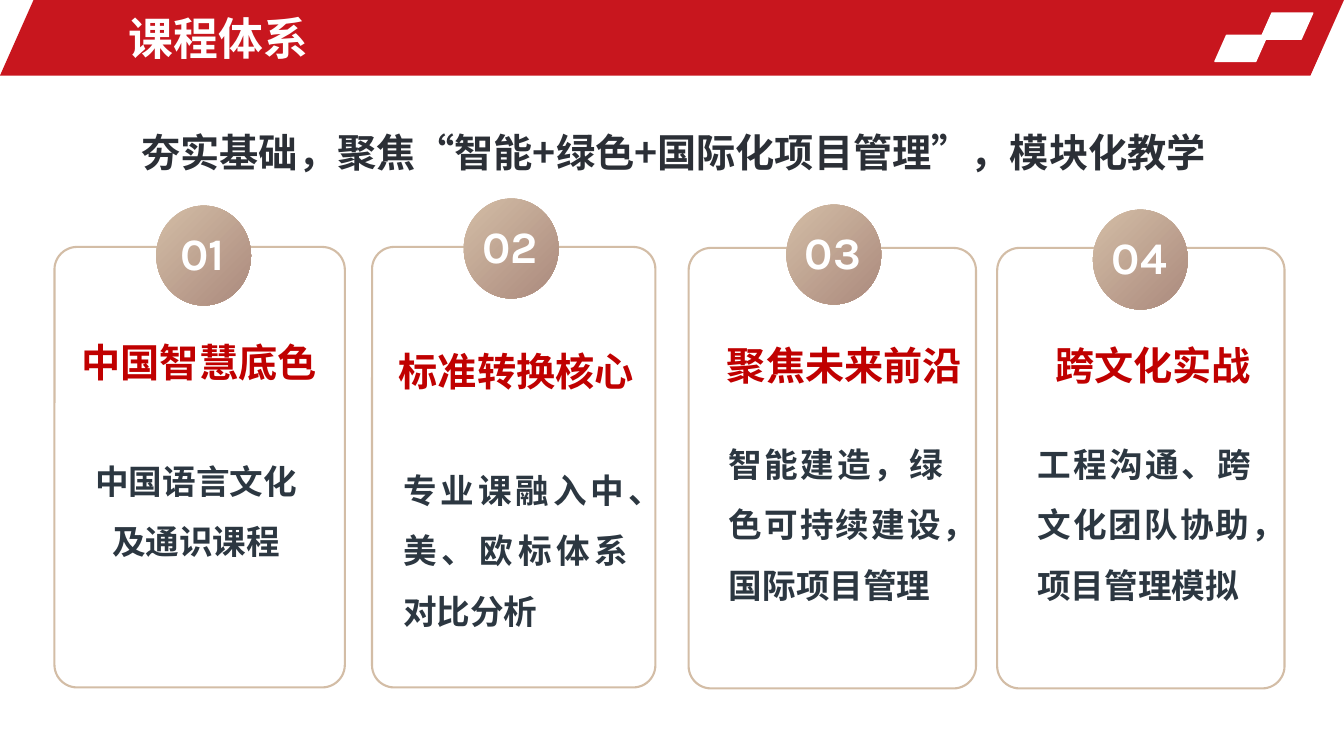
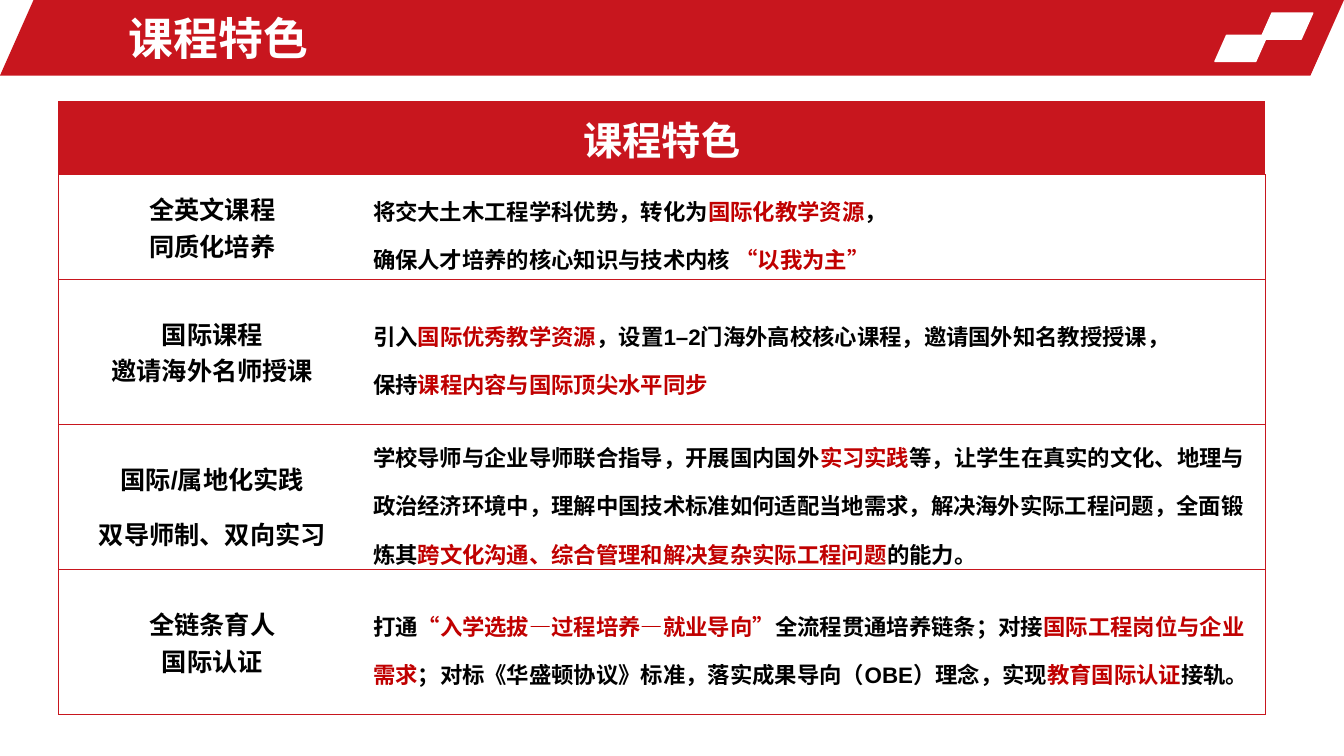
from dataclasses import dataclass

from lxml.etree import SubElement
from pptx import Presentation
from pptx.dml.color import RGBColor
from pptx.enum.lang import MSO_LANGUAGE_ID as Language
from pptx.enum.shapes import MSO_SHAPE as Shape
from pptx.enum.text import MSO_ANCHOR as Anchor, PP_ALIGN as Align
from pptx.oxml.ns import qn
from pptx.util import Inches, Pt

COLORS = {
    "band": "C8161E",
    "accent": "C00000",
    "tan": "D3BDA6",
    "brown": "AB8A7D",
    "lead": "2B2F36",
    "body": "2C3741",
    "black": "000000",
    "white": "FFFFFF",
}
HAN_FONT = "Noto Sans CJK SC"
LATIN_FONT = "Arial"
NUMBER_FONT = "Karla"

CARD_HEIGHT = 4.37
DISC_SIZE = (0.94, 0.99)
HEADING_HEIGHT = 0.57


@dataclass
class Card:
    """Frame and text boxes are (left, top, width); disc is (left, top)."""
    frame: tuple
    disc: tuple
    heading: str
    heading_box: tuple
    body: str
    body_box: tuple
    body_align: Align = Align.JUSTIFY


CARDS = [
    Card((0.54, 2.45, 2.88), (1.55, 2.04), "中国智慧底色", (0.43, 3.31, 3.09),
         "中国语言文化及通识课程", (0.76, 4.32, 2.37), Align.CENTER),
    Card((3.69, 2.45, 2.81), (4.6, 1.97), "标准转换核心", (3.85, 3.4, 2.54),
         "专业课融入中、美、欧标体系对比分析", (3.9, 4.41, 2.43)),
    Card((6.83, 2.46, 2.85), (7.8, 2.03), "聚焦未来前沿", (6.83, 3.34, 3.09),
         "智能建造，绿色可持续建设，国际项目管理", (7.13, 4.15, 2.32)),
    Card((9.89, 2.46, 2.85), (10.84, 2.08), "跨文化实战", (9.89, 3.34, 3.09),
         "工程沟通、跨文化团队协助，项目管理模拟", (10.19, 4.15, 2.32)),
]

# Each row: label lines, label line spacing, paragraphs of alternating
# plain and highlighted spans.
FEATURES = [
    (["全英文课程", "同质化培养"], 1.0, [
        ["将交大土木工程学科优势，转化为", "国际化教学资源", "，"],
        ["确保人才培养的核心知识与技术内核 ", "“以我为主”"],
    ]),
    (["国际课程", "邀请海外名师授课"], 1.0, [
        ["引入", "国际优秀教学资源",
         "，设置1–2门海外高校核心课程，邀请国外知名教授授课，"],
        ["保持", "课程内容与国际顶尖水平同步"],
    ]),
    (["国际/属地化实践", "双导师制、双向实习"], 1.5, [
        ["学校导师与企业导师联合指导，开展国内国外", "实习实践",
         "等，让学生在真实的文化、地理与政治经济环境中，理解中国技术标准"
         "如何适配当地需求，解决海外实际工程问题，全面锻炼其",
         "跨文化沟通、综合管理和解决复杂实际工程问题", "的能力。"],
    ]),
    (["全链条育人", "国际认证"], 1.0, [
        ["打通", "“入学选拔—过程培养—就业导向”", "全流程贯通培养链条；对接",
         "国际工程岗位与企业需求",
         "；对标《华盛顿协议》标准，落实成果导向（OBE）理念，实现",
         "教育国际认证", "接轨。"],
    ]),
]


def rgb(name):
    return RGBColor.from_string(COLORS[name])


def add_span(para, text, size, color, font_name=LATIN_FONT):
    span = para.add_run()
    span.text = text
    font = span.font
    font.size, font.bold, font.name = Pt(size), True, font_name
    font.color.rgb = rgb(color)
    font.language_id = Language.SIMPLIFIED_CHINESE
    east_asian = SubElement(span._r.get_or_add_rPr(), qn("a:ea"))
    east_asian.set("typeface", HAN_FONT)


def fill_frame(frame, paragraphs, size, color, font_name=LATIN_FONT,
               align=Align.LEFT, spacing=1.0):
    """Write paragraphs of spans; every second span is highlighted."""
    for number, spans in enumerate(paragraphs):
        para = frame.add_paragraph() if number else frame.paragraphs[0]
        para.alignment, para.line_spacing = align, spacing
        for index, text in enumerate(spans):
            add_span(para, text, size, "accent" if index % 2 else color, font_name)


def add_text(page, place, text, size, color, anchor=Anchor.TOP, **style):
    box = page.shapes.add_textbox(*map(Inches, place))
    box.text_frame.word_wrap = True
    box.text_frame.vertical_anchor = anchor
    fill_frame(box.text_frame, [[text]], size, color, **style)


def add_figure(page, kind, place, fill, line=None, width=1, adjust=None):
    figure = page.shapes.add_shape(kind, *map(Inches, place))
    figure.shadow.inherit = False
    if adjust is not None:
        figure.adjustments[0] = adjust
    if isinstance(fill, tuple):
        figure.fill.gradient()
        # The library counts angles counter-clockwise.
        figure.fill.gradient_angle = 315
        for stop, name in zip(figure.fill.gradient_stops, fill):
            stop.color.rgb = rgb(name)
    else:
        figure.fill.solid()
        figure.fill.fore_color.rgb = rgb(fill)
    if line:
        figure.line.color.rgb = rgb(line)
        figure.line.width = Pt(width)
    else:
        figure.line.fill.background()


def add_page(deck, title):
    """Add a blank page with the title band and its two white marks."""
    page = deck.slides.add_slide(deck.slide_layouts[6])
    page.background.fill.solid()
    page.background.fill.fore_color.rgb = rgb("white")
    add_figure(page, Shape.PARALLELOGRAM, (0, 0, 13.33, 0.75), "band", adjust=0.444)
    for left, top in ((12.5, 0.13), (12.05, 0.35)):
        add_figure(page, Shape.PARALLELOGRAM, (left, top, 0.52, 0.26),
                   "white", "white", adjust=0.444)
    add_text(page, (1.18, 0.05, 7.74, 0.65), title, 32, "white", Anchor.MIDDLE)
    return page


def add_card(page, number, card):
    add_figure(page, Shape.ROUNDED_RECTANGLE, (*card.frame, CARD_HEIGHT),
               "white", "tan", 1.5, 0.078)
    add_text(page, (*card.body_box, 1.85), card.body, 24, "body",
             font_name=HAN_FONT, align=card.body_align, spacing=1.5)
    add_text(page, (*card.heading_box, HEADING_HEIGHT), card.heading, 28, "accent",
             font_name=HAN_FONT, align=Align.CENTER)
    add_figure(page, Shape.OVAL, (*card.disc, *DISC_SIZE), ("tan", "brown"))
    left, top = card.disc
    add_text(page, (left + 0.07, top + 0.15, 0.78, 0.64), f"{number:02}", 32, "white",
             font_name=NUMBER_FONT, align=Align.CENTER)


def style_cell(cell, fill, sides):
    """Set margins and fill, and rule the given sides out of L, R, T and B."""
    cell.vertical_anchor = Anchor.MIDDLE
    cell.margin_left = cell.margin_right = Inches(0.07)
    cell.margin_top = cell.margin_bottom = 0
    properties = cell._tc.get_or_add_tcPr()
    for side in "LRTB":
        border = SubElement(properties, qn(f"a:ln{side}"), w=str(Pt(0.5)))
        if side in sides:
            solid = SubElement(border, qn("a:solidFill"))
            SubElement(solid, qn("a:srgbClr"), val=COLORS["band"])
        else:
            SubElement(border, qn("a:noFill"))
    cell.fill.solid()
    cell.fill.fore_color.rgb = rgb(fill)


def add_feature_table(page, title):
    place = map(Inches, (0.58, 1.01, 11.97, 6.08))
    table = page.shapes.add_table(len(FEATURES) + 1, 2, *place).table
    table.first_row = table.horz_banding = False
    for column, width in zip(table.columns, (3.05, 8.92)):
        column.width = Inches(width)
    for row, height in zip(table.rows, (0.72, 1.04, 1.44, 1.44, 1.44)):
        row.height = Inches(height)
        fill = "band" if row is table.rows[0] or height == 0.72 else "white"
        for cell, sides in zip(row.cells, ("LTB", "RTB")):
            style_cell(cell, fill, sides)

    header = table.cell(0, 0)
    header.merge(table.cell(0, 1))
    fill_frame(header.text_frame, [[title]], 28, "white", align=Align.CENTER)
    for row, (label, spacing, details) in enumerate(FEATURES, start=1):
        fill_frame(table.cell(row, 0).text_frame, [[line] for line in label],
                   18, "black", align=Align.CENTER, spacing=spacing)
        fill_frame(table.cell(row, 1).text_frame, details, 16, "black", spacing=1.5)


def main():
    deck = Presentation()
    deck.slide_width, deck.slide_height = Inches(13.33), Inches(7.5)

    system = add_page(deck, "课程体系")
    add_text(system, (0.24, 1.22, 12.88, HEADING_HEIGHT),
             "夯实基础，聚焦“智能+绿色+国际化项目管理”，模块化教学", 28, "lead",
             font_name=HAN_FONT, align=Align.CENTER)
    for number, card in enumerate(CARDS, start=1):
        add_card(system, number, card)

    features = add_page(deck, "课程特色")
    add_feature_table(features, "课程特色")

    deck.save("out.pptx")


if __name__ == "__main__":
    main()
